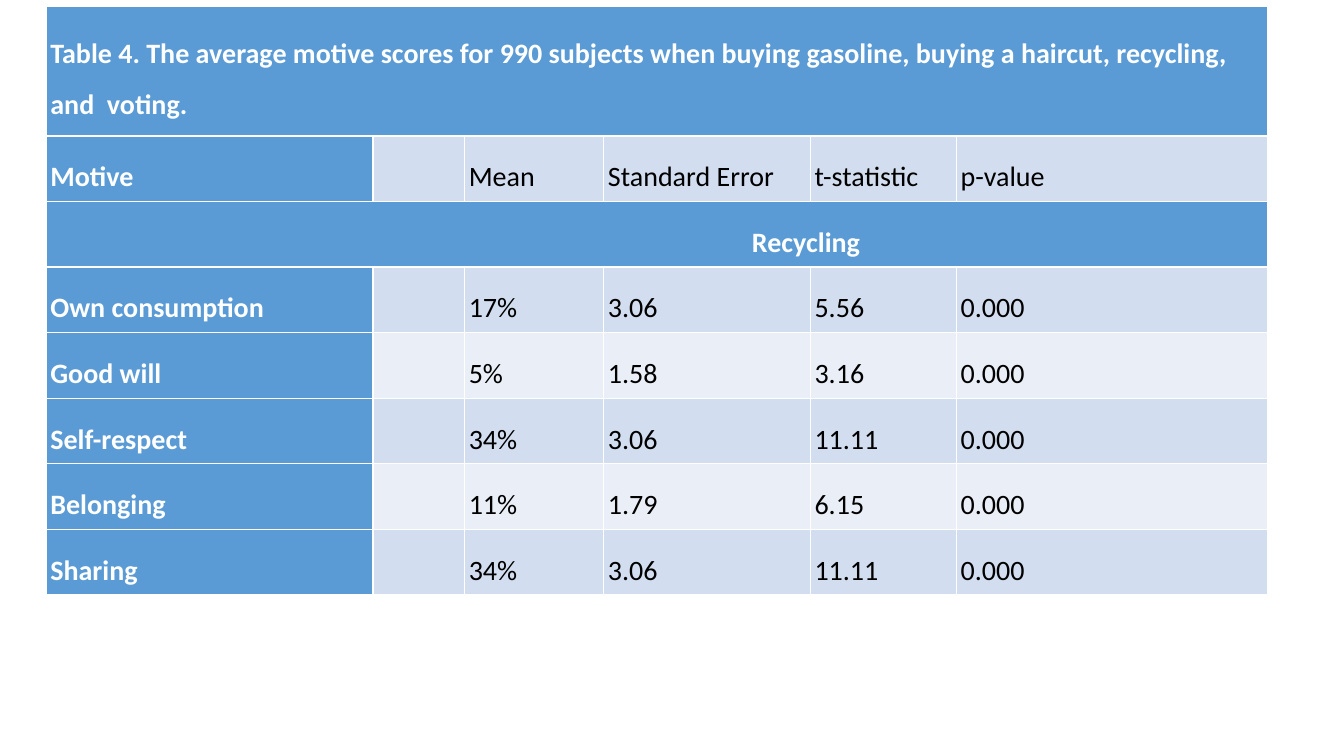
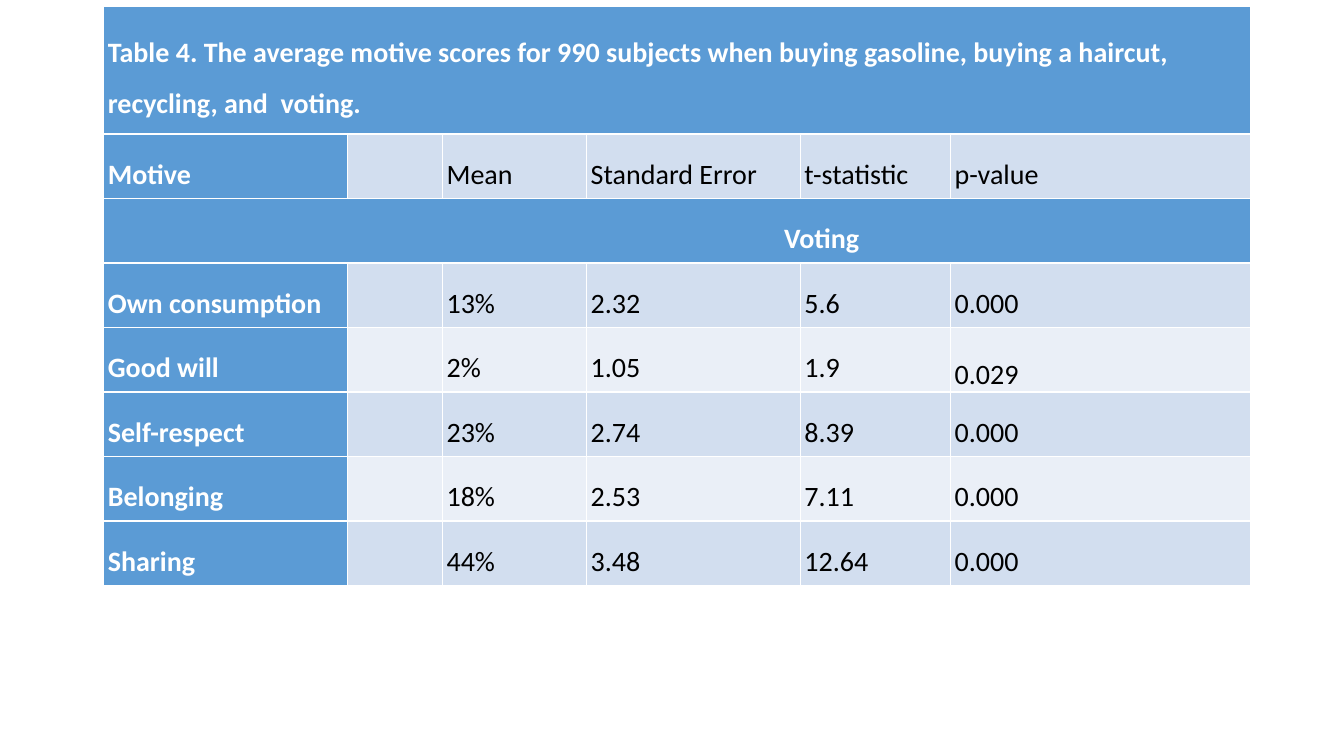
from pptx import Presentation
from pptx.dml.color import RGBColor
from pptx.enum import text
from pptx.util import Inches, Pt

HEADING_FILL = "5B9BD5"
BAND_FILLS = ["D2DEEF", "EAEFF7"]
WHITE, BLACK = "FFFFFF", "000000"
FONT = "Calibri"
CAPTION = ("Table 4. The average motive scores for 990 subjects when buying gasoline, "
           "buying a haircut, recycling, and  voting.")
COLUMN_HEADS = ["Motive", "", "Mean", "Standard Error", "t-statistic", "p-value"]
MOTIVES = ["Own consumption", "Good will", "Self-respect", "Belonging", "Sharing"]

ACTIVITIES = [
    {
        "name": "Recycling", "left": 0.46, "row_height": 0.65, "caption_height": 1.29,
        "indent": 3.0, "widths": [3.24, 0.91, 1.38, 2.05, 1.45, 1.38], "low_cells": [],
        "scores": [
            ["17%", "3.06", "5.56", "0.000"],
            ["5%", "1.58", "3.16", "0.000"],
            ["34%", "3.06", "11.11", "0.000"],
            ["11%", "1.79", "6.15", "0.000"],
            ["34%", "3.06", "11.11", "0.000"],
        ],
    },
    {
        "name": "Voting", "left": 1.03, "row_height": 0.64, "caption_height": 1.27,
        "indent": 2.9, "widths": [2.42, 0.94, 1.43, 2.12, 1.49, 1.43], "low_cells": [(4, 5)],
        "scores": [
            ["13%", "2.32", "5.6", "0.000"],
            ["2%", "1.05", "1.9", "0.029"],
            ["23%", "2.74", "8.39", "0.000"],
            ["18%", "2.53", "7.11", "0.000"],
            ["44%", "3.48", "12.64", "0.000"],
        ],
    },
]


def color(code):
    return RGBColor.from_string(code)


def fill_cell(cell, words, fill, is_heading):
    cell.fill.solid()
    cell.fill.fore_color.rgb = color(fill)
    cell.vertical_anchor = text.MSO_ANCHOR.MIDDLE
    cell.margin_left = cell.margin_right = Inches(0.04)
    cell.margin_top = cell.margin_bottom = 0
    if words:
        paragraph = cell.text_frame.paragraphs[0]
        paragraph.line_spacing = 1.5
        run = paragraph.add_run()
        run.text = words
        run.font.name = FONT
        run.font.size = Pt(20)
        run.font.bold = is_heading
        run.font.color.rgb = color(WHITE if is_heading else BLACK)


prs = Presentation()
prs.slide_width = Inches(13.33)
prs.slide_height = Inches(7.5)

for activity in ACTIVITIES:
    slide = prs.slides.add_slide(prs.slide_layouts[6])
    rows = [[CAPTION] + [""] * 5, COLUMN_HEADS, [activity["name"]] + [""] * 5]
    rows += [[motive, ""] + scores for motive, scores in zip(MOTIVES, activity["scores"])]
    heights = [activity["caption_height"]] + [activity["row_height"]] * (len(rows) - 1)
    motive_table = slide.shapes.add_table(
        len(rows), len(COLUMN_HEADS), Inches(activity["left"]), Inches(0.06),
        Inches(sum(activity["widths"])), Inches(sum(heights))).table
    motive_table.first_col = True

    for column, width in zip(motive_table.columns, activity["widths"]):
        column.width = Inches(width)
    for table_row, height in zip(motive_table.rows, heights):
        table_row.height = Inches(height)

    for r, row in enumerate(rows):
        is_full_row = r in (0, 2)
        for c, words in enumerate(row):
            is_heading = is_full_row or c == 0
            fill = HEADING_FILL if is_heading else BAND_FILLS[(r + 1) % 2]
            fill_cell(motive_table.cell(r, c), words, fill, is_heading)
        if is_full_row:
            motive_table.cell(r, 0).merge(motive_table.cell(r, len(row) - 1))

    activity_cell = motive_table.cell(2, 0)
    activity_cell.margin_left = Inches(activity["indent"])
    activity_cell.text_frame.paragraphs[0].alignment = text.PP_ALIGN.CENTER
    for r, c in activity["low_cells"]:
        motive_table.cell(r, c).vertical_anchor = text.MSO_ANCHOR.BOTTOM

prs.save("out.pptx")
